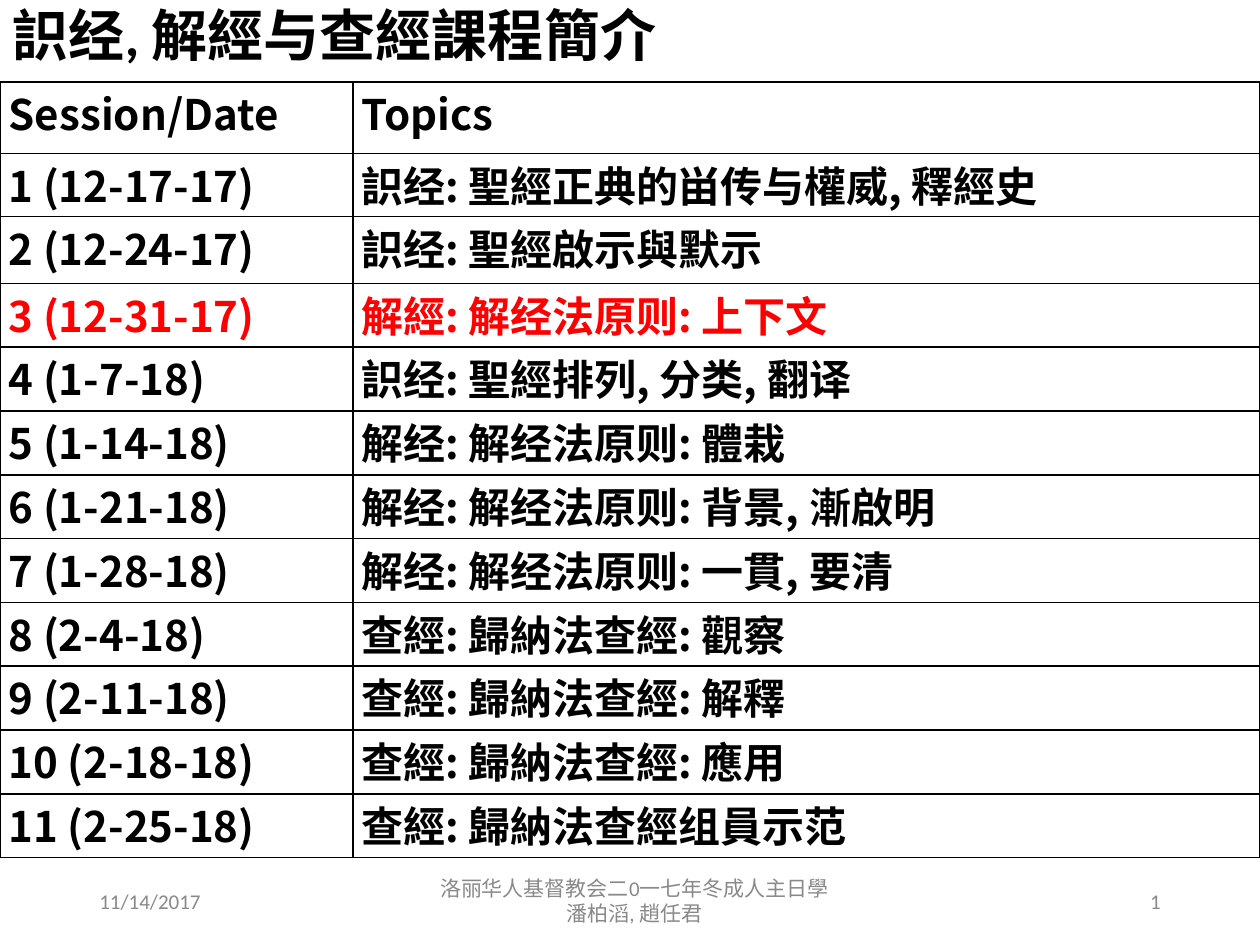
import pptx
import pptx.util
import pptx.dml.color
import pptx.enum.text
import pptx.oxml
import pptx.oxml.ns

Inches, Pt = pptx.util.Inches, pptx.util.Pt
ALIGN = pptx.enum.text.PP_ALIGN
MIDDLE = pptx.enum.text.MSO_ANCHOR.MIDDLE
WIDE, HIGH = 10, 7.5
COLORS = {"ink": "000000", "paper": "FFFFFF", "now": "FF0000", "foot": "898989"}

TITLE = "䛊经, 解經与查經課程簡介"
HEAD = ("Session/Date", "Topics")
NOW = 3  # session shown in red
PLAN = [
    ("12-17-17", "䛊经: 聖經正典的畄传与權威, 釋經史"),
    ("12-24-17", "䛊经: 聖經啟示與默示"),
    ("12-31-17", "解經: 解经法原则: 上下文"),
    ("1-7-18", "䛊经: 聖經排列, 分类, 翻译"),
    ("1-14-18", "解经: 解经法原则: 體栽"),
    ("1-21-18", "解经: 解经法原则: 背景, 漸啟明"),
    ("1-28-18", "解经: 解经法原则: 一貫, 要清"),
    ("2-4-18", "查經: 歸納法查經: 觀察"),
    ("2-11-18", "查經: 歸納法查經: 解釋"),
    ("2-18-18", "查經: 歸納法查經: 應用"),
    ("2-25-18", "查經: 歸納法查經组員示范"),
]
FOOT = [  # left, width, text, alignment
    (0.69, 2.25, "11/14/2017", ALIGN.LEFT),
    (3.31, 3.45, "洛丽华人基督教会二0一七年冬成人主日學 潘柏滔, 趙任君", ALIGN.CENTER),
    (7.06, 2.25, "1", ALIGN.RIGHT),
]


class Deck:
    """Style and current slide; lengths are shares of the slide's size."""

    body, grid = "Calibri", "Noto Sans CJK SC"

    def __init__(self):
        self.file = pptx.Presentation()
        self.file.slide_width, self.file.slide_height = Inches(WIDE), Inches(HIGH)
        self.slide = self.file.slides.add_slide(self.file.slide_layouts[5])

    def place(self, x, y, w, h):
        wide, high = self.file.slide_width, self.file.slide_height
        return int(x * wide), int(y * high), int(w * wide), int(h * high)

    def words(self, frame, text, face, size, color, bold=False, align=ALIGN.LEFT):
        frame.text = text
        para = frame.paragraphs[0]
        para.alignment = align
        font = para.font
        font.name, font.size, font.bold = face, Pt(size), bold
        font.color.rgb = pptx.dml.color.RGBColor.from_string(COLORS[color])
        return para

    def title(self, text, box):
        shape = self.slide.shapes.title
        shape.left, shape.top, shape.width, shape.height = self.place(*box)
        frame = shape.text_frame
        frame.auto_size = pptx.enum.text.MSO_AUTO_SIZE.NONE
        frame.vertical_anchor = MIDDLE
        self.words(frame, text, self.body, 32, "ink", True).line_spacing = 0.9

    def label(self, text, box, align):
        frame = self.slide.shapes.add_textbox(*self.place(*box)).text_frame
        frame.word_wrap, frame.vertical_anchor = True, MIDDLE
        self.words(frame, text, self.body, 12, "foot", align=align)

    def table(self, rows, box, cols, highs, marked):
        area = self.place(*box)
        table = self.slide.shapes.add_table(len(rows), len(cols), *area).table
        table.first_row = table.horz_banding = False
        for col, share in zip(table.columns, cols):
            col.width = int(share * area[2])
        for i, (row, high) in enumerate(zip(rows, highs)):
            table.rows[i].height = int(high * self.file.slide_height)
            for j, text in enumerate(row):
                self.cell(table.cell(i, j), text, "now" if i == marked else "ink")

    def cell(self, cell, text, color):
        cell.margin_left = cell.margin_right = Inches(0.07)
        cell.margin_top = cell.margin_bottom = 0
        self.words(cell.text_frame, text, self.grid, 24, color, True)
        # Borders come before the fill in the cell's properties
        space = pptx.oxml.ns.nsdecls("a")
        for side in ("lnL", "lnR", "lnT", "lnB"):
            line = (f'<a:{side} {space} w="{int(Pt(1))}"><a:solidFill>'
                    f'<a:srgbClr val="{COLORS["ink"]}"/></a:solidFill></a:{side}>')
            cell._tc.get_or_add_tcPr().append(pptx.oxml.parse_xml(line))
        cell.fill.solid()
        cell.fill.fore_color.rgb = pptx.dml.color.RGBColor.from_string(COLORS["paper"])


def main():
    deck = Deck()

    # Title
    deck.title(TITLE, (0, 0, 0.9, 0.61 / HIGH))

    # Footer: date, class and page
    for left, width, text, align in FOOT:
        deck.label(text, (left / WIDE, 6.95 / HIGH, width / WIDE, 0.4 / HIGH), align)

    # Course plan: first rows vary, the rest share what is left
    rows = [HEAD] + [(f"{n} ({date})", topic) for n, (date, topic) in enumerate(PLAN, 1)]
    total, first = 6.16, [0.57, 0.5, 0.53]
    count = len(rows) - len(first)
    highs = first + [(total - sum(first)) / count] * count
    deck.table(rows, (0, 0.65 / HIGH, 1, total / HIGH), (0.28, 0.72),
               [high / HIGH for high in highs], NOW)

    deck.file.save("out.pptx")


if __name__ == "__main__":
    main()
